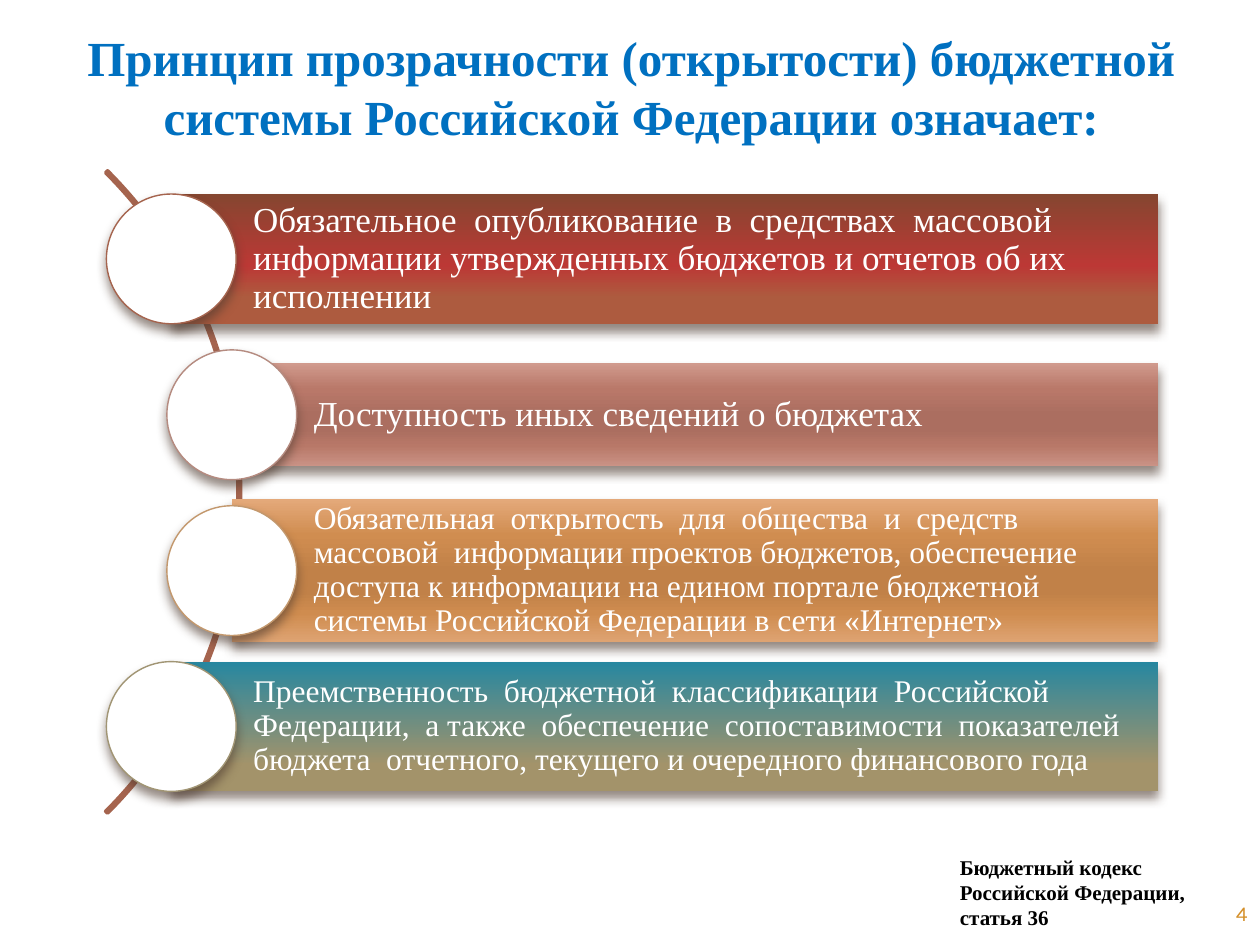
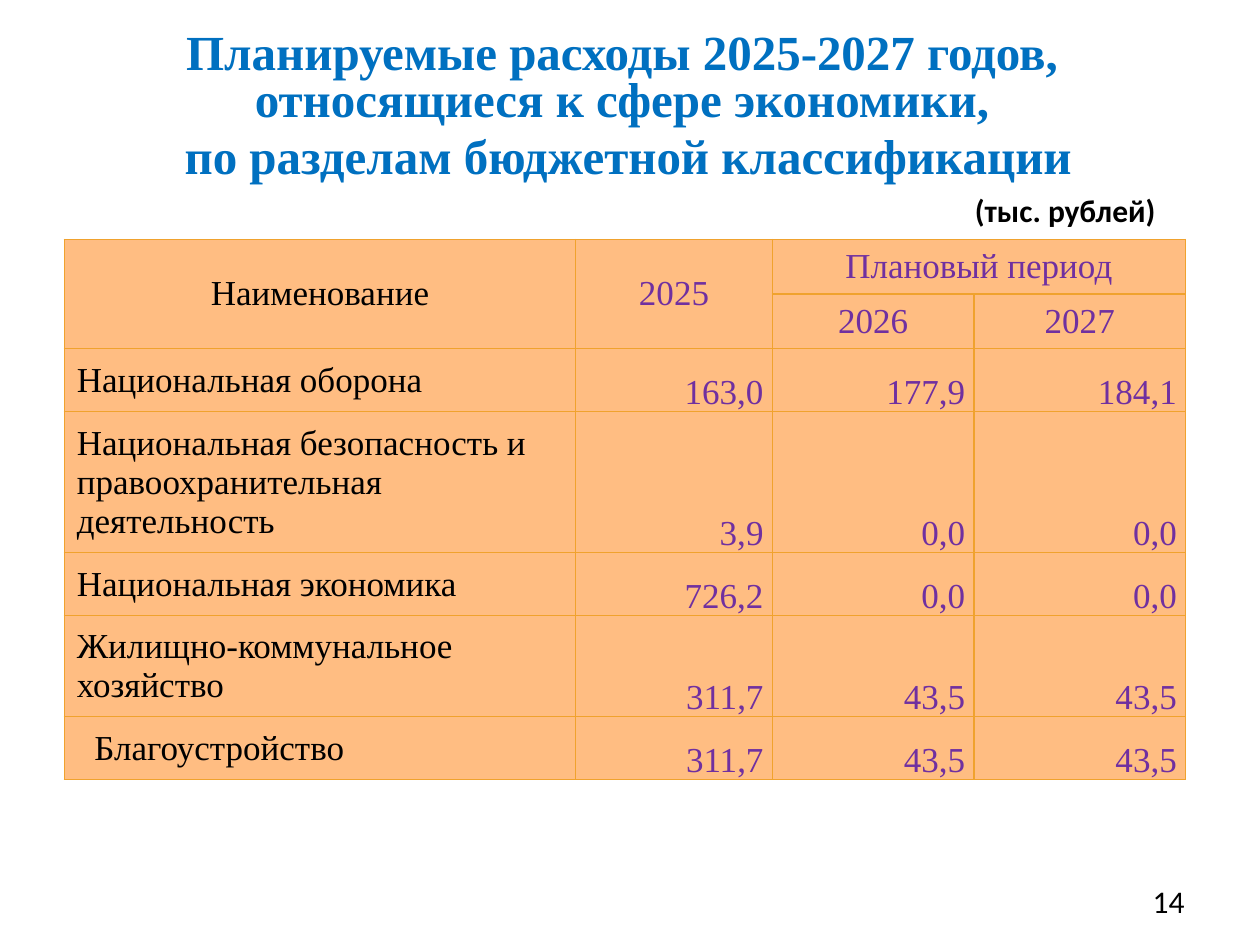
from lxml import etree
from pptx import Presentation
from pptx.dml.color import RGBColor
from pptx.enum.shapes import MSO_SHAPE
from pptx.enum.text import MSO_ANCHOR, PP_ALIGN
from pptx.oxml.ns import qn
from pptx.util import Emu, Inches, Pt

LEFT, CENTER, RIGHT = PP_ALIGN.LEFT, PP_ALIGN.CENTER, PP_ALIGN.RIGHT
TOP, MIDDLE, BOTTOM = MSO_ANCHOR.TOP, MSO_ANCHOR.MIDDLE, MSO_ANCHOR.BOTTOM
RECTANGLE, OVAL, BLOCK_ARC = MSO_SHAPE.RECTANGLE, MSO_SHAPE.OVAL, MSO_SHAPE.BLOCK_ARC

# Slide size and a grid of 100 columns by 75 rows
WIDTH, HEIGHT = Inches(10), Inches(7.5)
COLUMN, ROW = WIDTH / 100, HEIGHT / 75

SERIF, SANS, NUMBER_FONT = "Times New Roman", "Calibri", "Karla"
BLACK, WHITE, BLUE, PURPLE = "000000", "FFFFFF", "0070C0", "7030A0"
GOLD, BROWN, SHADOW = "D48F29", "A5644E", "4E3B30"
CELL_FILL, CELL_BORDER = "FFBD82", "F0A22E"
TITLE_STYLE = {"size": 28, "bold": True, "color": BLUE, "align": CENTER}

# Bars: left column, height in rows, text size, circle outline, gradient, text
PRINCIPLES = [
    (13.6, 10.3, 20, BROWN,
     [(0, "854630"), (55, "BC3835"), (80, "AD5B3F"), (100, "AF5A3D")],
     "Обязательное  опубликование  в  средствах  массовой  информации "
     "утвержденных бюджетов и отчетов об их исполнении"),
    (18.4, 8.2, 20, "B58B80",
     [(0, "D09A8D"), (25, "B97869"), (50, "AB6E60"),
      (65, "AB6E60"), (80, "B87868"), (100, "CA9386")],
     "Доступность иных сведений о бюджетах"),
    (18.4, 11.3, 18, "C3986D",
     [(0, "E4A97A"), (25, "D08D50"), (50, "C18148"),
      (65, "C18148"), (80, "CF8C4F"), (100, "DEA372")],
     "Обязательная  открытость  для  общества  и  средств  массовой  "
     "информации проектов бюджетов, обеспечение доступа к информации на "
     "едином портале бюджетной системы Российской Федерации в сети «Интернет»"),
    (13.6, 10.2, 18, "A19574",
     [(0, "2787A0"), (80, "A3936A"), (100, "A49569")],
     "Преемственность  бюджетной  классификации  Российской  Федерации,  "
     "а также  обеспечение  сопоставимости  показателей  бюджета  отчетного, "
     "текущего и очередного финансового года"),
]

TABLE_COLUMNS = [40.6, 15.6, 16, 16.8]
TABLE_ROWS = [4.3, 4.3, 5, 11.2, 5, 8, 5]
# Header cells: row, column, last row, last column, text, colour
HEADERS = [
    (0, 0, 1, 0, "Наименование", BLACK),
    (0, 1, 1, 1, "2025", PURPLE),
    (0, 2, 0, 3, "Плановый период", PURPLE),
    (1, 2, 1, 2, "2026", PURPLE),
    (1, 3, 1, 3, "2027", PURPLE),
]
# Expenses: name, indent in columns, values by year
EXPENSES = [
    ("Национальная оборона", 0, "163,0", "177,9", "184,1"),
    ("Национальная безопасность и правоохранительная деятельность", 0,
     "3,9", "0,0", "0,0"),
    ("Национальная экономика", 0, "726,2", "0,0", "0,0"),
    ("Жилищно-коммунальное хозяйство", 0, "311,7", "43,5", "43,5"),
    ("Благоустройство", 1.4, "311,7", "43,5", "43,5"),
]


def rgb(color):
    return RGBColor.from_string(color)


def place(left, top, width, height):
    """Turn grid columns and rows into lengths."""
    return (Emu(int(left * COLUMN)), Emu(int(top * ROW)),
            Emu(int(width * COLUMN)), Emu(int(height * ROW)))


def add_node(parent, tag, **attributes):
    node = etree.SubElement(parent, qn(tag))
    for name, value in attributes.items():
        node.set(name, str(value))
    return node


def write(frame, text, size=18, font=SERIF, color=BLACK, bold=False, align=LEFT,
          anchor=TOP, line_spacing=None, space_before=None, wrap=True):
    """Fill a text frame; a newline starts a paragraph, \\v breaks a line."""
    frame.word_wrap = wrap
    frame.vertical_anchor = anchor
    for number, line in enumerate(text.split("\n")):
        paragraph = frame.add_paragraph() if number else frame.paragraphs[0]
        paragraph.text = line
        paragraph.alignment = align
        paragraph.line_spacing = line_spacing
        if space_before is not None:
            paragraph.space_before = Pt(space_before)
        for run in paragraph.runs:
            run.font.size, run.font.name, run.font.bold = Pt(size), font, bold
            run.font.color.rgb = rgb(color)


def add_text(slide, box, text, **style):
    write(slide.shapes.add_textbox(*place(*box)).text_frame, text, **style)


def add_shape(slide, kind, box, fill=None, gradient=None, line=None,
              line_width=0.79, shadow=True):
    shape = slide.shapes.add_shape(kind, *place(*box))
    shape.shadow.inherit = False
    if gradient:
        set_gradient(shape, gradient)
    elif fill:
        shape.fill.solid()
        shape.fill.fore_color.rgb = rgb(fill)
    else:
        shape.fill.background()
    if line:
        shape.line.color.rgb = rgb(line)
        shape.line.width = Pt(line_width)
    else:
        shape.line.fill.background()
    if shadow:
        effects = shape.element.spPr.find(qn("a:effectLst"))
        outer = add_node(effects, "a:outerShdw", blurRad=Pt(6), dist=Pt(4),
                         dir=5400000, rotWithShape=0)
        add_node(add_node(outer, "a:srgbClr", val=SHADOW), "a:alpha", val=60000)
    return shape


def set_gradient(shape, stops):
    """Run the colour stops from top to bottom."""
    shape.fill.gradient()
    shape.fill.gradient_angle = 270
    stop_list = shape.element.spPr.find(qn("a:gradFill")).find(qn("a:gsLst"))
    for stop in list(stop_list):
        stop_list.remove(stop)
    for position, color in stops:
        stop = add_node(stop_list, "a:gs", pos=position * 1000)
        add_node(stop, "a:srgbClr", val=color)


def add_principle(slide, middle, principle):
    left, height, size, outline, gradient, text = principle
    right, diameter = 91.9, 10.3
    bar = add_shape(slide, RECTANGLE,
                    (left, middle - height / 2, right - left, height),
                    gradient=gradient)
    frame = bar.text_frame
    frame.margin_left = Inches(0.65)
    frame.margin_right = frame.margin_top = frame.margin_bottom = Inches(0.06)
    write(frame, text, size=size, color=WHITE, anchor=MIDDLE, line_spacing=0.9)
    add_shape(slide, OVAL, (left - diameter / 2, middle - diameter / 2,
                            diameter, diameter), fill=WHITE, line=outline)


def style_cell(cell):
    cell.fill.solid()
    cell.fill.fore_color.rgb = rgb(CELL_FILL)
    properties = cell._tc.get_or_add_tcPr()
    for index, side in enumerate(("a:lnL", "a:lnR", "a:lnT", "a:lnB")):
        border = add_node(properties, side, w=Pt(0.79))
        add_node(add_node(border, "a:solidFill"), "a:srgbClr", val=CELL_BORDER)
        properties.insert(index, border)


def write_cell(cell, text, margins=(1, 0.5), indent=0, anchor=MIDDLE, **style):
    side, edge = margins
    cell.margin_left = int((side + indent) * COLUMN)
    cell.margin_right = int(side * COLUMN)
    cell.margin_top = cell.margin_bottom = int(edge * ROW)
    write(cell.text_frame, text, size=20, **style)
    cell.vertical_anchor = anchor


def add_expense_table(slide):
    box = place(5.1, 19, sum(TABLE_COLUMNS), sum(TABLE_ROWS))
    table = slide.shapes.add_table(len(TABLE_ROWS), len(TABLE_COLUMNS), *box).table
    table.first_row = table.horz_banding = False
    for column, width in zip(table.columns, TABLE_COLUMNS):
        column.width = int(width * COLUMN)
    for row, height in zip(table.rows, TABLE_ROWS):
        row.height = int(height * ROW)
    for cell in table.iter_cells():
        style_cell(cell)

    # Header
    for row, column, last_row, last_column, text, color in HEADERS:
        cell = table.cell(row, column)
        if (row, column) != (last_row, last_column):
            cell.merge(table.cell(last_row, last_column))
        write_cell(cell, text, color=color, align=CENTER)

    # Names and yearly values
    for row, (name, indent, *values) in enumerate(EXPENSES, start=2):
        write_cell(table.cell(row, 0), name, indent=indent)
        for column, value in enumerate(values, start=1):
            write_cell(table.cell(row, column), value, margins=(0.7, 0),
                       anchor=BOTTOM, color=PURPLE, align=RIGHT)


def build_principles(slide):
    add_text(slide, (5.1, 1.7, 90, 10.6),
             "Принцип прозрачности (открытости) бюджетной системы "
             "Российской Федерации означает:", **TITLE_STYLE)
    arc = add_shape(slide, BLOCK_ARC, (-53, 3, 72.1, 72.1), line=BROWN,
                    line_width=2, shadow=False)
    for index, value in enumerate((189, 27, 0.003)):
        arc.adjustments[index] = value
    first_middle, pitch = 20.55, 12.37
    for index, principle in enumerate(PRINCIPLES):
        add_principle(slide, first_middle + index * pitch, principle)
    add_text(slide, (75.2, 67.3, 21.7, 7.1),
             "Бюджетный кодекс\nРоссийской Федерации,\nстатья 36",
             size=12, bold=True)
    add_text(slide, (76.7, 71, 23.3, 4), "4", size=12, font=NUMBER_FONT,
             color=GOLD, align=RIGHT)


def build_expenses(slide):
    add_text(slide, (5.6, 2.1, 88.5, 11.4),
             "Планируемые расходы 2025-2027 годов, \vотносящиеся к сфере "
             "экономики, \nпо разделам бюджетной классификации",
             line_spacing=0.8, space_before=5.6, **TITLE_STYLE)
    add_expense_table(slide)
    add_text(slide, (74.2, 14.7, 18.5, 4), "(тыс. рублей)", font=SANS,
             bold=True, align=RIGHT, wrap=False)
    add_text(slide, (71.7, 69.5, 23.3, 4), "14", font=SANS, align=RIGHT,
             anchor=MIDDLE)


def main():
    presentation = Presentation()
    presentation.slide_width, presentation.slide_height = WIDTH, HEIGHT
    blank = presentation.slide_layouts[6]
    for build in (build_principles, build_expenses):
        build(presentation.slides.add_slide(blank))
    presentation.save("out.pptx")


if __name__ == "__main__":
    main()
